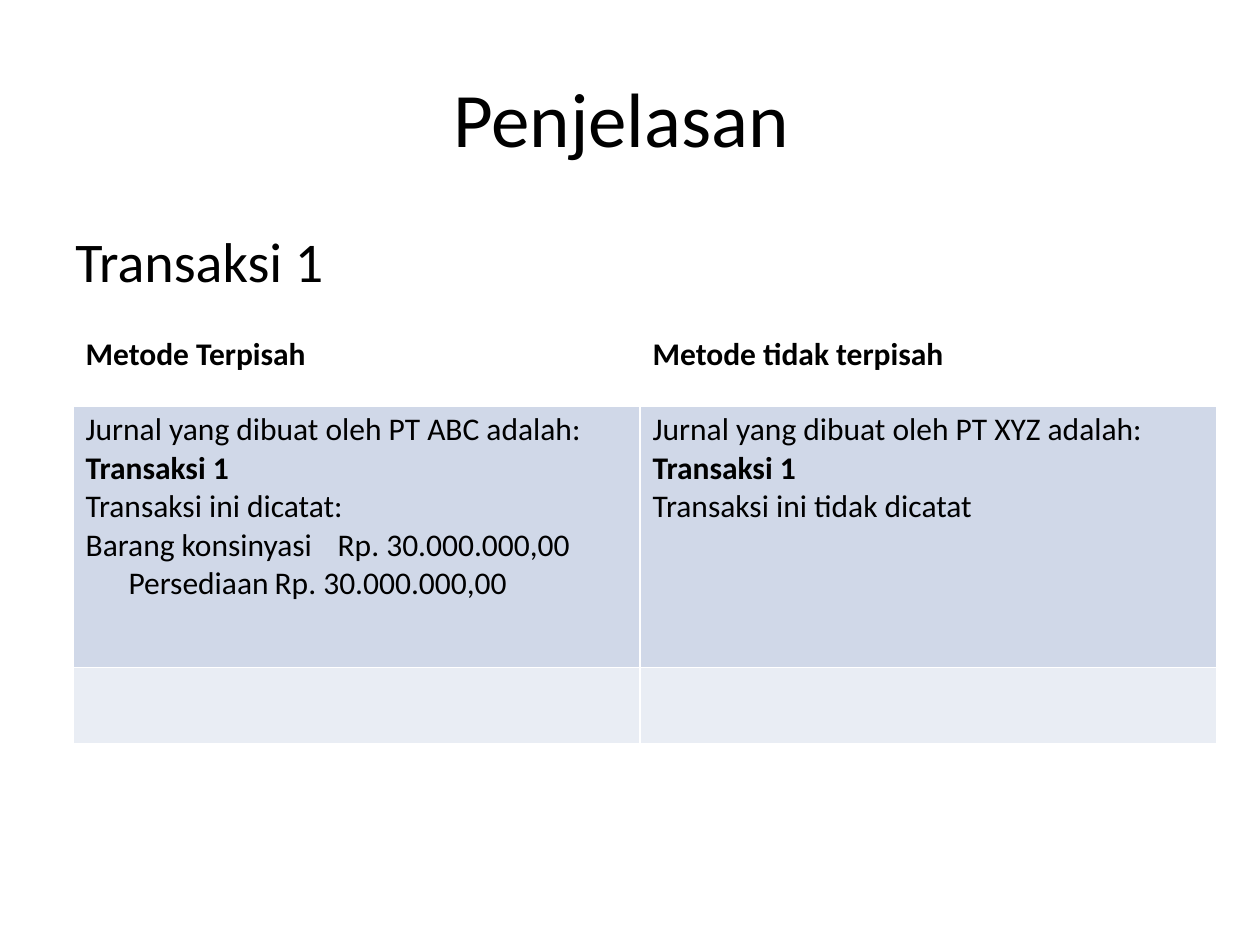
import pptx
import pptx.util
import pptx.dml.color
import pptx.enum.text
import pptx.oxml.ns
import lxml.etree

Inches = pptx.util.Inches
Pt = pptx.util.Pt
qn = pptx.oxml.ns.qn


def rgb(value):
    return pptx.dml.color.RGBColor.from_string(value)


class Deck:
    font = "Calibri"
    ink = "000000"
    line = "FFFFFF"

    def __init__(self, prs):
        self.s = prs.slides.add_slide(prs.slide_layouts[5])

    def run(self, p, text, size, bold=False):
        r = p.add_run()
        r.text = text
        r.font.name = self.font
        r.font.size = Pt(size)
        r.font.bold = bold
        r.font.color.rgb = rgb(self.ink)

    def title(self, text, box):
        sp = self.s.shapes.title
        sp.left, sp.top, sp.width, sp.height = map(Inches, box)
        tf = sp.text_frame
        tf.vertical_anchor = pptx.enum.text.MSO_ANCHOR.MIDDLE
        p = tf.paragraphs[0]
        p.alignment = pptx.enum.text.PP_ALIGN.CENTER
        self.run(p, text, 44)

    def text(self, text, box):
        tf = self.s.shapes.add_textbox(*map(Inches, box)).text_frame
        tf.word_wrap = True
        p = tf.paragraphs[0]
        p.space_before = Pt(2)
        self.run(p, text, 32)

    def border(self, cell, bottom):
        tcPr = cell._tc.get_or_add_tcPr()
        for side, width in (("L", 1), ("R", 1), ("T", 1), ("B", bottom)):
            ln = lxml.etree.SubElement(tcPr, qn("a:ln" + side), w=str(Pt(width)))
            fill = lxml.etree.SubElement(ln, qn("a:solidFill"))
            lxml.etree.SubElement(fill, qn("a:srgbClr"), val=self.line)

    def indent(self, p, first, tab):
        pPr = p._p.get_or_add_pPr()
        pPr.set("marL", "0")
        pPr.set("indent", str(Inches(first)))
        tabs = lxml.etree.SubElement(pPr, qn("a:tabLst"))
        lxml.etree.SubElement(tabs, qn("a:tab"), pos=str(Inches(tab)), algn="l")

    def cell(self, cell, lines, fill, bottom):
        self.border(cell, bottom)
        if fill:
            cell.fill.solid()
            cell.fill.fore_color.rgb = rgb(fill)
        else:
            cell.fill.background()
        tf = cell.text_frame
        for i, (text, bold, *stops) in enumerate(lines):
            p = tf.add_paragraph() if i else tf.paragraphs[0]
            if stops:
                self.indent(p, *stops)
            self.run(p, text, 18, bold)

    def table(self, rows, fills, left, top, widths, heights):
        box = map(Inches, (left, top, sum(widths), sum(heights)))
        table = self.s.shapes.add_table(len(heights), len(widths), *box).table
        for column, width in zip(table.columns, widths):
            column.width = Inches(width)
        for i, (row, height) in enumerate(zip(table.rows, heights)):
            row.height = Inches(height)
            for cell, lines in zip(row.cells, rows[i]):
                self.cell(cell, lines, fills[i], 1 if i else 3)


def main():
    prs = pptx.Presentation()
    prs.slide_width, prs.slide_height = Inches(10), Inches(7.5)
    deck = Deck(prs)
    deck.title("Penjelasan ", (0.5, 0.3, 9, 1.25))
    deck.text("Transaksi 1", (0.5, 1.75, 9, 4.95))
    separate = [
        ("Jurnal yang dibuat oleh PT ABC adalah:", False),
        ("Transaksi 1", True),
        ("Transaksi ini dicatat:", False),
        ("Barang konsinyasi\tRp. 30.000.000,00", False, 0, 2.08),
        ("Persediaan\tRp. 30.000.000,00", False, 0.34, 2.52),
    ]
    combined = [
        ("Jurnal yang dibuat oleh PT XYZ adalah:", False),
        ("Transaksi 1", True),
        ("Transaksi ini tidak dicatat", False),
    ]
    rows = [
        ([("Metode Terpisah", True)], [("Metode tidak terpisah", True)]),
        (separate, combined),
        ([], []),
    ]
    deck.table(rows, (None, "D0D8E8", "E9EDF4"), 0.58, 2.61, (4.5, 4.58), (0.6, 2.09, 0.6))
    prs.save("out.pptx")


if __name__ == "__main__":
    main()
